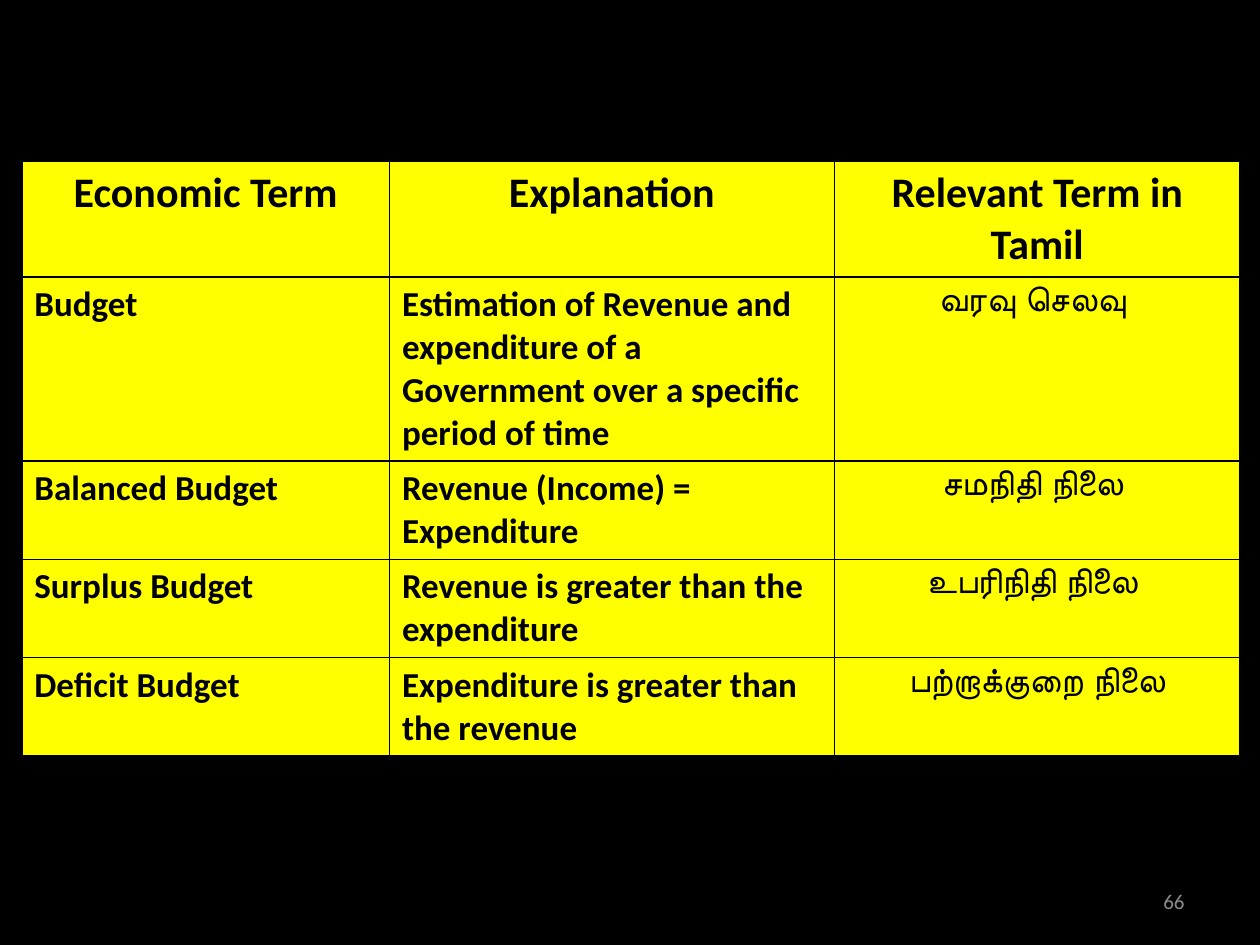
from typing import NamedTuple

import pptx
import pptx.dml.color
import pptx.enum.text
import pptx.oxml
import pptx.oxml.ns
import pptx.util
from pptx.util import Cm

FONT = "Calibri"
BLACK, YELLOW, GREY = "000000", "FFFF00", "8C8C8C"
LEFT, CENTER, RIGHT = (
    pptx.enum.text.PP_ALIGN.LEFT,
    pptx.enum.text.PP_ALIGN.CENTER,
    pptx.enum.text.PP_ALIGN.RIGHT,
)


class GlossaryRow(NamedTuple):
    term: str
    explanation: str
    tamil: str


HEADINGS = GlossaryRow("Economic Term", "Explanation", "Relevant Term in Tamil")
ENTRIES = [
    GlossaryRow(
        "Budget",
        "Estimation of Revenue and expenditure of a Government "
        "over a specific period of time",
        "வரவு செலவு ",
    ),
    GlossaryRow("Balanced Budget", "Revenue (Income) = Expenditure", "சமநிதி நிலை "),
    GlossaryRow(
        "Surplus Budget", "Revenue is greater than the expenditure", "உபரிநிதி நிலை "
    ),
    GlossaryRow(
        "Deficit Budget", "Expenditure is greater than the revenue", "பற்றாக்குறை நிலை"
    ),
]
COLUMN_WIDTHS = GlossaryRow(Cm(7.41), Cm(8.97), Cm(8.18))
ROW_HEIGHTS = [Cm(2.31), Cm(3.7), Cm(1.97), Cm(1.97), Cm(1.97)]


def color(hex_value: str) -> pptx.dml.color.RGBColor:
    return pptx.dml.color.RGBColor.from_string(hex_value)


def write(frame, text: str, size: int, hex_value: str, bold: bool, align) -> None:
    frame.text = text
    paragraph = frame.paragraphs[0]
    paragraph.alignment = align
    font = paragraph.runs[0].font
    font.name, font.size, font.bold = FONT, pptx.util.Pt(size), bold
    font.color.rgb = color(hex_value)


def add_borders(cell, hex_value: str) -> None:
    """Draw a 1 pt line on all four sides; borders must precede the fill."""
    properties = cell._tc.get_or_add_tcPr()
    for position, side in enumerate(("lnL", "lnR", "lnT", "lnB")):
        line = pptx.oxml.parse_xml(
            f'<a:{side} {pptx.oxml.ns.nsdecls("a")} w="{pptx.util.Pt(1)}">'
            f'<a:solidFill><a:srgbClr val="{hex_value}"/></a:solidFill></a:{side}>'
        )
        properties.insert(position, line)


def add_glossary(slide) -> None:
    rows = [HEADINGS, *ENTRIES]
    table = slide.shapes.add_table(
        len(rows), len(HEADINGS), Cm(0.44), Cm(3.26),
        sum(COLUMN_WIDTHS), sum(ROW_HEIGHTS),
    ).table
    for column, width in zip(table.columns, COLUMN_WIDTHS):
        column.width = width
    for row_index, (row, height) in enumerate(zip(rows, ROW_HEIGHTS)):
        table.rows[row_index].height = height
        is_heading = row is HEADINGS
        for column_index, text in enumerate(row):
            cell = table.cell(row_index, column_index)
            cell.fill.solid()
            cell.fill.fore_color.rgb = color(YELLOW)
            add_borders(cell, BLACK)
            centered = is_heading or text is row.tamil
            write(cell.text_frame, text, 24 if is_heading else 20, BLACK, True,
                  CENTER if centered else LEFT)


def add_page_number(slide, number: int) -> None:
    frame = slide.shapes.add_textbox(
        Cm(18.2), Cm(17.66), Cm(5.93), Cm(1.01)
    ).text_frame
    frame.word_wrap = True
    frame.vertical_anchor = pptx.enum.text.MSO_ANCHOR.MIDDLE
    write(frame, str(number), 12, GREY, False, RIGHT)


def main() -> None:
    deck = pptx.Presentation()
    deck.slide_width, deck.slide_height = Cm(25.4), Cm(19.05)
    slide = deck.slides.add_slide(deck.slide_layouts[6])
    slide.background.fill.solid()
    slide.background.fill.fore_color.rgb = color(BLACK)
    add_glossary(slide)
    add_page_number(slide, 66)
    deck.save("out.pptx")


if __name__ == "__main__":
    main()
